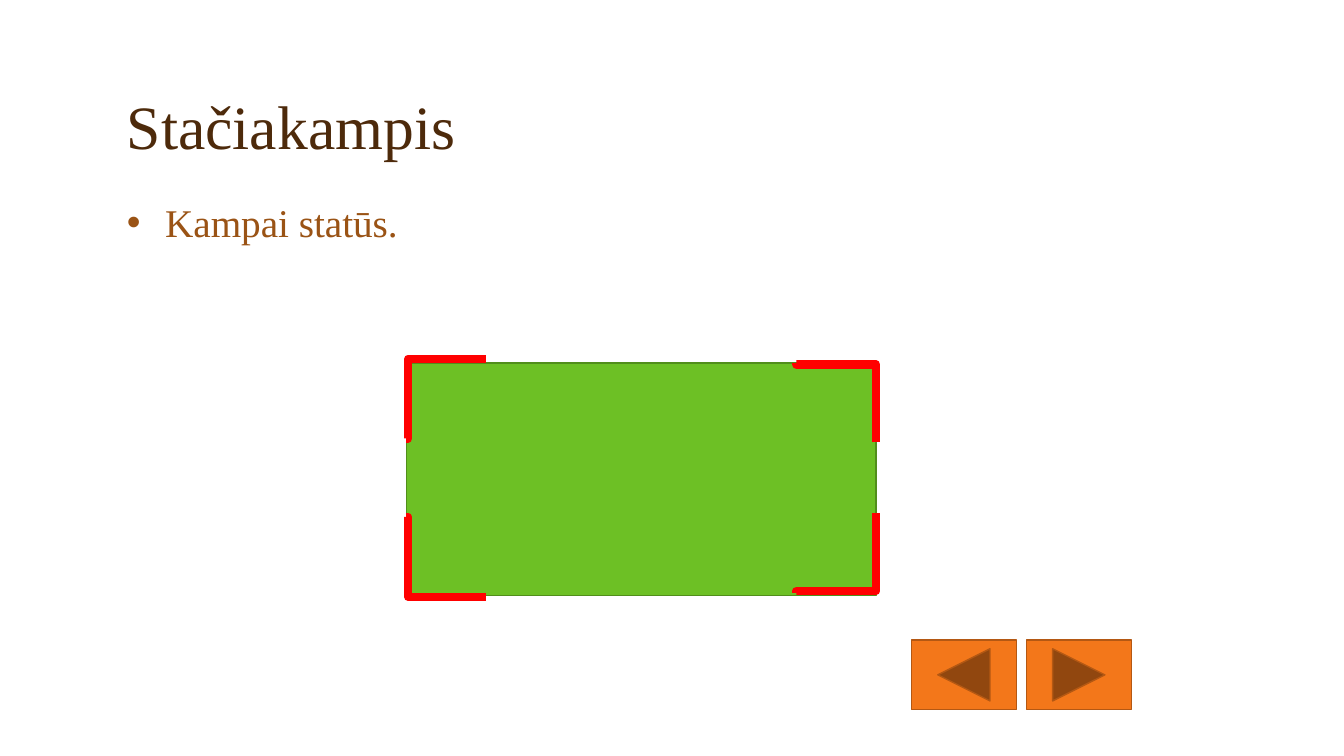
from dataclasses import dataclass

from lxml.etree import SubElement
from pptx import Presentation
from pptx.dml.color import RGBColor
from pptx.enum.shapes import MSO_CONNECTOR, MSO_SHAPE
from pptx.enum.text import MSO_ANCHOR
from pptx.oxml.ns import qn
from pptx.util import Inches, Pt


@dataclass(frozen=True)
class Theme:
    """Colours, font and sizes of the slide."""
    font: str = "Times New Roman"
    title: str = "4D2A0B"
    body: str = "9A5315"
    rectangle: str = "6DC025"
    rectangle_edge: str = "518E1B"
    corner: str = "FF0000"
    button: str = "F3771A"
    button_edge: str = "B45813"
    title_size: int = 44
    body_size: int = 28
    edge_width: int = 1
    corner_width: int = 6


THEME = Theme()


def set_line(line, color, width):
    """Give a line its colour and width."""
    line.color.rgb = RGBColor.from_string(color)
    line.width = Pt(width)


def add_text(page, place, text, size, color, anchor=MSO_ANCHOR.TOP, spacing=1.0, bullet=False):
    """Add a one-paragraph text box, with a bullet if asked."""
    box = page.shapes.add_textbox(*map(Inches, place))
    frame = box.text_frame
    frame.word_wrap = True
    frame.vertical_anchor = anchor
    para = frame.paragraphs[0]
    para.line_spacing = spacing
    if bullet:
        properties = para._p.get_or_add_pPr()
        properties.set("marL", str(Inches(0.38)))
        properties.set("indent", str(Inches(-0.38)))
        SubElement(properties, qn("a:buFont")).set("typeface", "Arial")
        SubElement(properties, qn("a:buChar")).set("char", "•")
    span = para.add_run()
    span.text = text
    for name, value in {"name": THEME.font, "size": Pt(size)}.items():
        setattr(span.font, name, value)
    span.font.color.rgb = RGBColor.from_string(color)


def add_block(page, kind, place, fill, edge):
    """Add a filled preset shape with a thin edge."""
    block = page.shapes.add_shape(kind, *map(Inches, place))
    block.shadow.inherit = False
    block.fill.solid()
    block.fill.fore_color.rgb = RGBColor.from_string(fill)
    set_line(block.line, edge, THEME.edge_width)


def add_corner(group, left, top, turn, flipped):
    """Add a right-angle mark as a turned elbow connector."""
    side = 0.79
    corner = group.shapes.add_connector(
        MSO_CONNECTOR.ELBOW, *map(Inches, (left, top, left + side, top + side)))
    set_line(corner.line, THEME.corner, THEME.corner_width)
    properties = corner._element.spPr
    transform = properties.find(qn("a:xfrm"))
    transform.set("rot", str(turn * 60000))
    if flipped:
        transform.set("flipV", "1")
    adjustments = properties.find(qn("a:prstGeom")).find(qn("a:avLst"))
    guide = SubElement(adjustments, qn("a:gd"))
    for name, value in {"name": "adj1", "fmla": "val 97700"}.items():
        guide.set(name, value)
    SubElement(properties, qn("a:effectLst"))


def main():
    """Build the slide and save it."""
    deck = Presentation()
    deck.slide_width, deck.slide_height = Inches(13.33), Inches(7.5)
    page = deck.slides.add_slide(deck.slide_layouts[6])

    add_text(page, (1.16, 0.33, 11, 1.33), "Stačiakampis", THEME.title_size, THEME.title,
             anchor=MSO_ANCHOR.BOTTOM, spacing=0.9)
    add_text(page, (1.16, 1.92, 5.2, 4.62), "Kampai statūs.", THEME.body_size, THEME.body,
             bullet=True)

    add_block(page, MSO_SHAPE.RECTANGLE, (4.03, 3.6, 4.66, 2.31),
              THEME.rectangle, THEME.rectangle_edge)
    group = page.shapes.add_group_shape()
    for left, top, turn, flipped in (
        (4.03, 3.56, 180, True),
        (7.9, 3.6, 270, True),
        (4.03, 5.13, 180, False),
        (7.9, 5.09, 90, False),
    ):
        add_corner(group, left, top, turn, flipped)

    for kind, left in (
        (MSO_SHAPE.ACTION_BUTTON_FORWARD_OR_NEXT, 10.18),
        (MSO_SHAPE.ACTION_BUTTON_BACK_OR_PREVIOUS, 9.04),
    ):
        add_block(page, kind, (left, 6.35, 1.04, 0.69), THEME.button, THEME.button_edge)

    deck.save("out.pptx")


if __name__ == "__main__":
    main()
